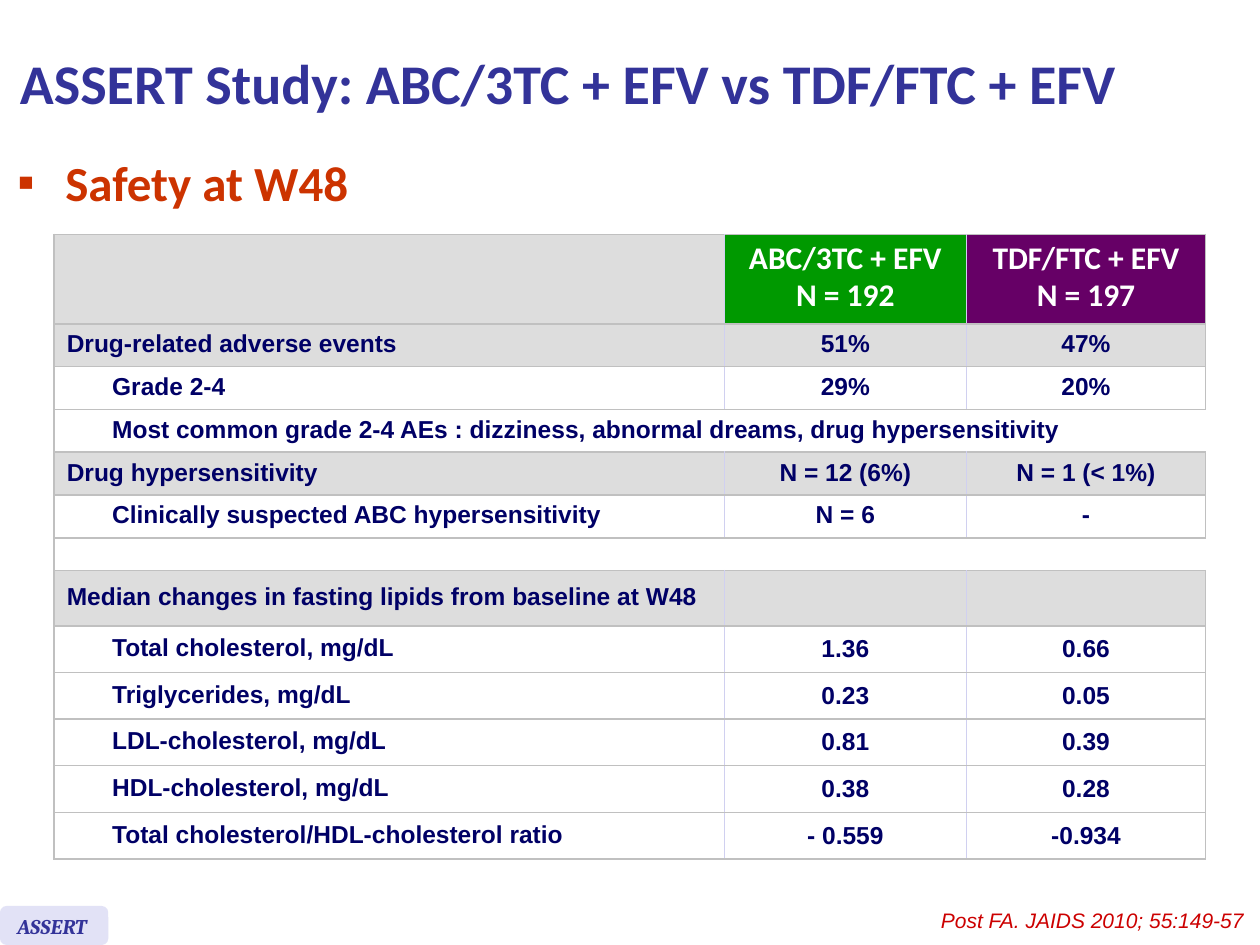
from dataclasses import dataclass

from lxml.etree import SubElement
from pptx import Presentation
from pptx.dml.color import RGBColor
from pptx.enum.shapes import MSO_SHAPE
from pptx.enum.text import MSO_ANCHOR, PP_ALIGN
from pptx.oxml import parse_xml
from pptx.oxml.ns import nsdecls, qn
from pptx.util import Inches, Pt


@dataclass(frozen=True)
class Theme:
    title: str = "333399"
    heading: str = "CC3300"
    body: str = "000066"
    source: str = "CC0000"
    white: str = "FFFFFF"
    band: str = "DDDDDD"
    badge: str = "E2E2F6"
    abc_arm: str = "009900"
    tdf_arm: str = "660066"
    rule: str = "C0C0C0"
    divider: str = "D0D0F0"
    title_size: int = 32
    heading_size: int = 28
    header_size: int = 18
    body_size: int = 14
    small_size: int = 12
    empty_size: int = 8
    display_font: str = "Calibri"
    body_font: str = "Arial"
    badge_font: str = "Cambria"


THEME = Theme()

COLUMNS = [0.36, 4.96, 1.92, 1.9]
ROW_HEIGHTS = [0.71] + [0.34] * 5 + [0.26, 0.44] + [0.37] * 5
ARMS = [("ABC/3TC + EFV\nN = 192", THEME.abc_arm),
        ("TDF/FTC + EFV\nN = 197", THEME.tdf_arm)]
# Row kinds: band = grey group row, item = indented row,
# note = indented text across the row, gap = empty row
ROWS = [
    ("band", "Drug-related adverse events", "51%", "47%"),
    ("item", "Grade 2-4", "29%", "20%"),
    ("note", "Most common grade 2-4 AEs : dizziness, abnormal dreams, "
             "drug hypersensitivity", "", ""),
    ("band", "Drug hypersensitivity", "N = 12 (6%)", "N = 1 (< 1%)"),
    ("item", "Clinically suspected ABC hypersensitivity", "N = 6", "-"),
    ("gap", "", "", ""),
    ("band", "Median changes in fasting lipids from baseline at W48", "", ""),
    ("item", "Total cholesterol, mg/dL", "1.36", "0.66"),
    ("item", "Triglycerides, mg/dL", "0.23", "0.05"),
    ("item", "LDL-cholesterol, mg/dL", "0.81", "0.39"),
    ("item", "HDL-cholesterol, mg/dL", "0.38", "0.28"),
    ("item", "Total cholesterol/HDL-cholesterol ratio", "- 0.559", "-0.934"),
]
# First and last merged column of each row kind
SPANS = {"band": (0, 1), "note": (1, 3), "gap": (0, 3)}


def rgb(color):
    return RGBColor.from_string(color)


def style(p, size, color, font, bold=False, italic=False):
    for r in p.runs:
        r.font.size, r.font.name = Pt(size), font
        r.font.bold, r.font.italic = bold, italic
        r.font.color.rgb = rgb(color)


def add_text(shapes, box, text, *look, wrap=True, **flags):
    tb = shapes.add_textbox(*(Inches(v) for v in box))
    tf = tb.text_frame
    tf.word_wrap = wrap
    tf.text = text
    style(tf.paragraphs[0], *look, **flags)
    return tf


def add_title(slide, box):
    tf = add_text(slide.shapes, box, "ASSERT Study: ABC/3TC + EFV vs TDF/FTC + EFV",
                  THEME.title_size, THEME.title, THEME.display_font, bold=True)
    tf.vertical_anchor = MSO_ANCHOR.MIDDLE


def add_heading(slide, box):
    tf = add_text(slide.shapes, box, "Safety at W48", THEME.heading_size,
                  THEME.heading, THEME.display_font, bold=True)
    p = tf.paragraphs[0]
    p.line_spacing = Pt(22.8)
    pPr = p._p.get_or_add_pPr()
    pPr.set("marL", str(Inches(0.38)))
    pPr.set("indent", str(-Inches(0.38)))
    color = SubElement(pPr, qn("a:buClr"))
    SubElement(color, qn("a:srgbClr"), val=THEME.heading)
    SubElement(pPr, qn("a:buFont"), typeface=THEME.body_font)
    SubElement(pPr, qn("a:buChar"), char="▪")


def set_borders(cell, left, right):
    """Grey rules above and below; the side lines may be absent (None)."""
    tcPr = cell._tc.get_or_add_tcPr()
    sides = [("L", left), ("R", right), ("T", THEME.rule), ("B", THEME.rule)]
    for i, (side, color) in enumerate(sides):
        paint = (f'<a:solidFill><a:srgbClr val="{color}"/></a:solidFill>'
                 if color else "<a:noFill/>")
        tcPr.insert(i, parse_xml(
            f'<a:ln{side} {nsdecls("a")} w="{Pt(1)}">{paint}</a:ln{side}>'))


def fill_cell(cell, text, fill, size, color, font, centred, spacing):
    cell.fill.solid()
    cell.fill.fore_color.rgb = rgb(fill)
    cell.vertical_anchor = MSO_ANCHOR.MIDDLE
    tf = cell.text_frame
    tf.text = text
    for i, p in enumerate(tf.paragraphs):
        p.alignment = PP_ALIGN.CENTER if centred else PP_ALIGN.LEFT
        p.line_spacing = spacing
        if i:
            p.space_before = Pt(size * 0.2)
        style(p, size, color, font, bold=True)
        if not text:  # keeps empty cells from stretching their row
            SubElement(p._p, qn("a:endParaRPr"), sz=str(THEME.empty_size * 100))


def add_safety_table(slide, box):
    table = slide.shapes.add_table(len(ROW_HEIGHTS), len(COLUMNS),
                                   *(Inches(v) for v in box)).table
    table.first_row = table.horz_banding = False
    for column, width in zip(table.columns, COLUMNS):
        column.width = Inches(width)
    for row, height in zip(table.rows, ROW_HEIGHTS):
        row.height = Inches(height)

    kinds = ["band"] + [row[0] for row in ROWS]
    for r, kind in enumerate(kinds):
        # Lines between columns: none beside the indent or inside a merged row
        inner = None if kind in ("note", "gap") else THEME.divider
        edges = [THEME.rule, None, inner, inner, THEME.rule]
        for c in range(len(COLUMNS)):
            set_borders(table.cell(r, c), edges[c], edges[c + 1])
        if kind in SPANS:
            first, last = SPANS[kind]
            table.cell(r, first).merge(table.cell(r, last))

    # Header row
    body = (THEME.body_size, THEME.body, THEME.body_font)
    header = (THEME.header_size, THEME.white, THEME.display_font)
    for c in (0, 1):
        fill_cell(table.cell(0, c), "", THEME.band, *body, False, 0.9)
    for c, (label, fill) in enumerate(ARMS, start=2):
        fill_cell(table.cell(0, c), label, fill, *header, True, 0.8)

    # Body rows
    for r, (kind, label, *values) in enumerate(ROWS, start=1):
        fill = THEME.band if kind == "band" else THEME.white
        texts = [label, ""] if kind == "band" else ["", label]
        for c, text in enumerate(texts + values):
            lipid = r > 7 and c > 1
            fill_cell(table.cell(r, c), text, fill, *body, c > 1,
                      1.0 if lipid else 0.9)


def add_source(slide, box):
    add_text(slide.shapes, box, "Post FA. JAIDS 2010; 55:149-57", THEME.small_size,
             THEME.source, THEME.body_font, italic=True, wrap=False)


def add_badge(slide, box):
    left, top, width, height = box
    group = slide.shapes.add_group_shape()
    sp = group.shapes.add_shape(MSO_SHAPE.ROUNDED_RECTANGLE,
                                *(Inches(v) for v in box))
    sp.shadow.inherit = False
    sp.fill.solid()
    sp.fill.fore_color.rgb = rgb(THEME.badge)
    sp.line.fill.background()
    add_text(group.shapes, (left + 0.04, top + 0.01, width - 0.07, height - 0.01),
             "ASSERT", THEME.small_size, THEME.title, THEME.badge_font,
             bold=True, italic=True)


def main():
    prs = Presentation()
    prs.slide_width, prs.slide_height = Inches(10), Inches(7.5)
    slide = prs.slides.add_slide(prs.slide_layouts[6])
    add_heading(slide, (0.04, 1.31, 9.87, 0.51))
    add_safety_table(slide, (0.43, 1.86, 9.14, 4.97))
    add_title(slide, (0.06, 0.05, 9.55, 1.21))
    add_source(slide, (7.37, 7.15, 2.63, 0.3))
    add_badge(slide, (0, 7.19, 0.86, 0.31))
    prs.save("out.pptx")


if __name__ == "__main__":
    main()
